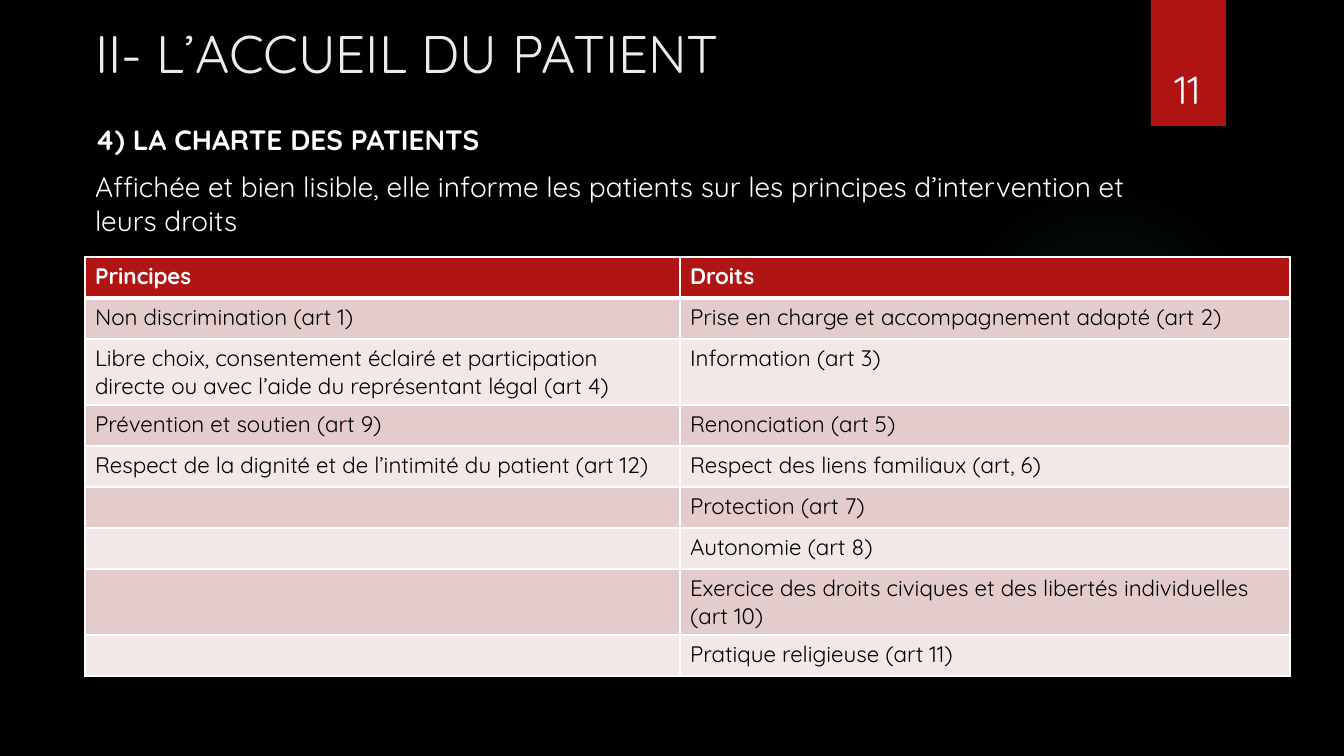
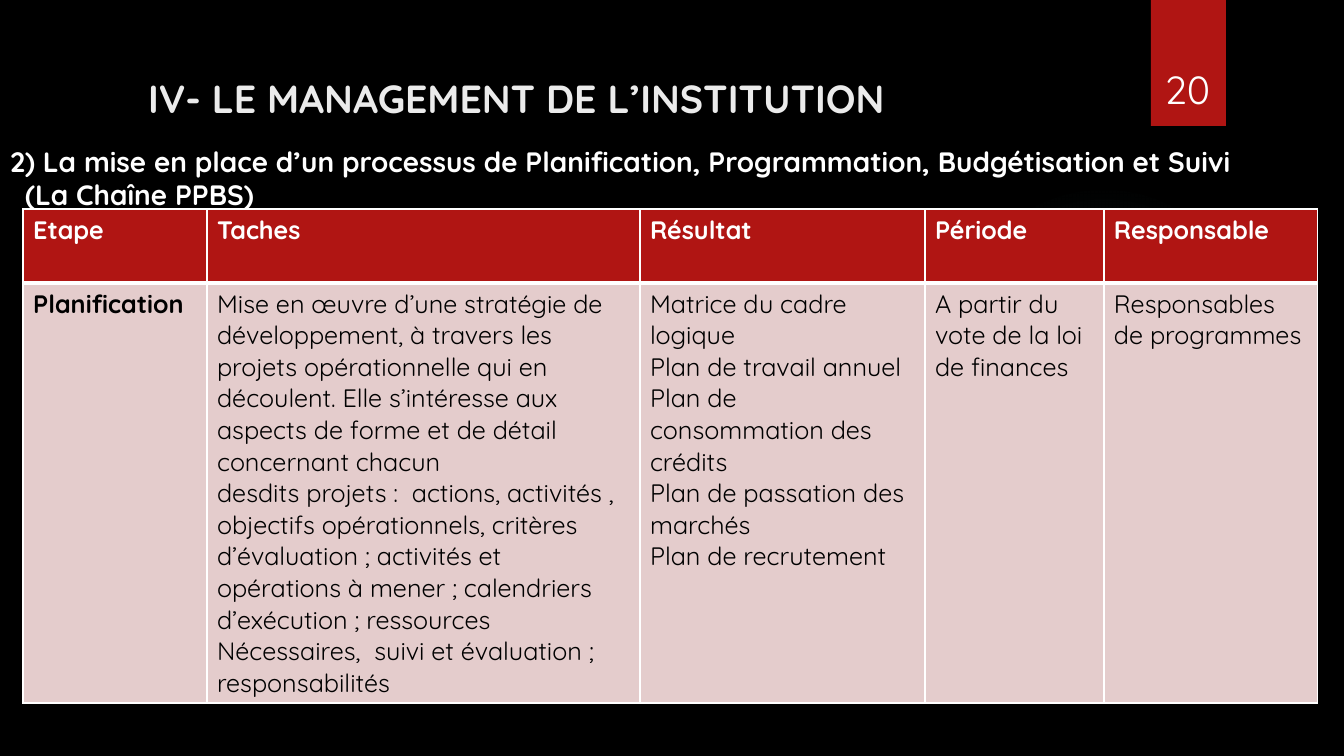
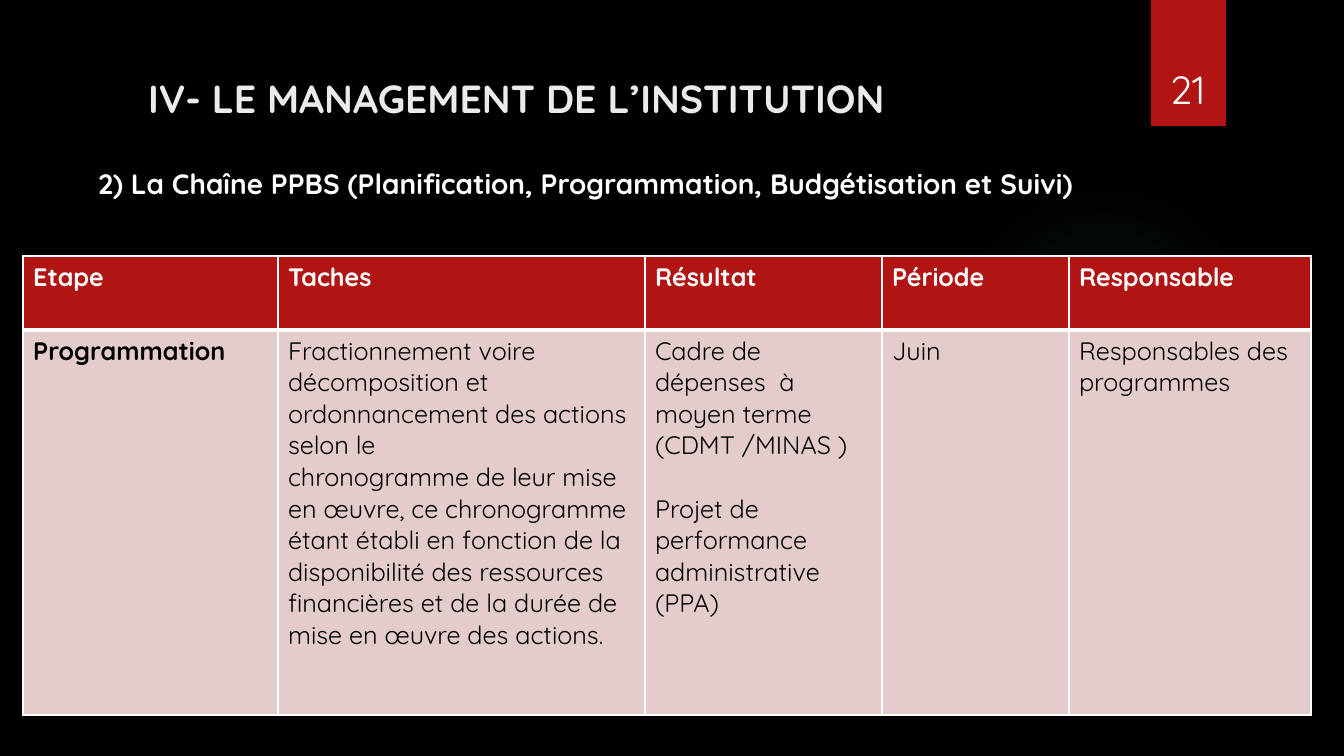
import lxml.etree
import pptx
import pptx.dml.color
import pptx.enum.shapes
import pptx.enum.text
import pptx.oxml
import pptx.oxml.ns
import pptx.util

# Shared look
RGBColor = pptx.dml.color.RGBColor
BLACK = RGBColor(0x00, 0x00, 0x00)
WHITE = RGBColor(0xFF, 0xFF, 0xFF)
TITLE_GREY = RGBColor(0xEB, 0xEB, 0xEB)
RED = RGBColor(0xB0, 0x15, 0x13)
BAND_DARK = RGBColor(0xE4, 0xCC, 0xCC)
BAND_LIGHT = RGBColor(0xF2, 0xE8, 0xE7)
GLOW = RGBColor(0x50, 0xB9, 0xC1)
FONT = "Quicksand"
EMU_PER_PX = 914400 / 100.8
SLIDE_SIZE = (1344, 756)
ANCHOR = pptx.enum.text.MSO_ANCHOR
ALIGN = pptx.enum.text.PP_ALIGN
SHAPE = pptx.enum.shapes.MSO_SHAPE

HEADINGS = ["Etape", "Taches", "Résultat", "Période", "Responsable"]
MANAGEMENT_TITLE = "IV- LE MANAGEMENT DE L’INSTITUTION"


def px(length):
    return pptx.util.Emu(round(length * EMU_PER_PX))


def place(shape, box):
    shape.left, shape.top, shape.width, shape.height = map(px, box)


def write_text(frame, text, size=20, color=WHITE, bold=False, align=ALIGN.LEFT,
               anchor=ANCHOR.TOP, hanging=0):
    """Write a string, or a list of paragraphs: text or (text, own format)."""
    frame.word_wrap = True
    frame.vertical_anchor = anchor
    for index, item in enumerate([text] if isinstance(text, str) else text):
        words, own = (item, {}) if isinstance(item, str) else item
        paragraph = frame.paragraphs[0] if index == 0 else frame.add_paragraph()
        properties = paragraph._p.get_or_add_pPr()
        properties.set("marL", str(px(hanging)))
        properties.set("indent", str(-px(hanging)))
        lxml.etree.SubElement(properties, pptx.oxml.ns.qn("a:buNone"))
        paragraph.alignment = align
        paragraph.space_before = pptx.util.Pt(own.get("gap", 0))
        run = paragraph.add_run()
        run.text = words
        run.font.name = FONT
        run.font.size = pptx.util.Pt(size)
        run.font.bold = own.get("bold", bold)
        run.font.color.rgb = color


# Master: background, glow and red tab
def add_master_shape(master, slide, kind, box, color):
    shape = slide.shapes.add_shape(kind, *map(px, box))
    shape.shadow.inherit = False
    shape.fill.solid()
    shape.fill.fore_color.rgb = color
    shape.line.fill.background()
    master.shapes._spTree.append(shape._element)
    return shape


def fade_out(shape, color):
    """Replace the solid fill by a radial one that fades to nothing."""
    stops = "".join(
        f'<a:gs pos="{position * 1000}"><a:srgbClr val="{color}">'
        f'<a:alpha val="{alpha * 1000}"/></a:srgbClr></a:gs>'
        for position, alpha in ((0, 7), (36, 6), (69, 0), (100, 0)))
    gradient = pptx.oxml.parse_xml(
        f'<a:gradFill {pptx.oxml.ns.nsdecls("a")}><a:gsLst>{stops}</a:gsLst>'
        '<a:path path="circle"><a:fillToRect l="50000" t="50000" r="50000" '
        'b="50000"/></a:path></a:gradFill>')
    properties = shape._element.spPr
    solid = properties.find(pptx.oxml.ns.qn("a:solidFill"))
    properties.replace(solid, gradient)


def dress_master(master, slide):
    master.background.fill.solid()
    master.background.fill.fore_color.rgb = BLACK
    glow = add_master_shape(master, slide, SHAPE.OVAL, (949, 184, 310, 310), GLOW)
    fade_out(glow, GLOW)
    add_master_shape(master, slide, SHAPE.RECTANGLE, (1151, 0, 75, 126), RED)


# Slide frame: title, body and page number
def fill_placeholder(shape, box, text, **text_format):
    place(shape, box)
    write_text(shape.text_frame, text, **text_format)
    shape.text_frame.auto_size = pptx.enum.text.MSO_AUTO_SIZE.NONE


def add_page_number(slide, number):
    box = slide.shapes.add_textbox(*map(px, (1141, 32, 93, 85)))
    write_text(box.text_frame, number, size=28, align=ALIGN.CENTER, anchor=ANCHOR.BOTTOM)


def fill_frame(slide, title, title_box, body, body_box, number,
               title_size=28, title_bold=True, hanging=0):
    fill_placeholder(slide.shapes.title, title_box, title, size=title_size,
                     bold=title_bold, color=TITLE_GREY)
    fill_placeholder(slide.placeholders[1], body_box, body, bold=True, hanging=hanging)
    add_page_number(slide, number)


# Tables
def set_borders(cell, top, bottom):
    properties = cell._tc.get_or_add_tcPr()
    for index, (side, points) in enumerate(
            (("L", 1), ("R", 1), ("T", top), ("B", bottom))):
        properties.insert(index, pptx.oxml.parse_xml(
            f'<a:ln{side} {pptx.oxml.ns.nsdecls("a")} w="{pptx.util.Pt(points)}">'
            f'<a:solidFill><a:srgbClr val="{WHITE}"/></a:solidFill></a:ln{side}>'))


def add_grid(slide, left, top, widths, heights, rows, size, bold_first=False):
    frame = slide.shapes.add_table(len(rows), len(widths), px(left), px(top),
                                   px(sum(widths)), px(sum(heights)))
    table = frame.table
    table.horz_banding = False
    for column, width in zip(table.columns, widths):
        column.width = px(width)
    for row, height in zip(table.rows, heights):
        row.height = px(height)
    for row_index, row in enumerate(rows):
        header = row_index == 0
        band = RED if header else BAND_DARK if row_index % 2 else BAND_LIGHT
        for column_index, text in enumerate(row):
            cell = table.cell(row_index, column_index)
            cell.fill.solid()
            cell.fill.fore_color.rgb = band
            set_borders(cell, top=3 if row_index == 1 else 1, bottom=3 if header else 1)
            if text:
                write_text(cell.text_frame, text, size=size,
                           color=WHITE if header else BLACK,
                           bold=header or (bold_first and column_index == 0))


# Slides
def build_charter(slide):
    fill_frame(
        slide, "II- L’ACCUEIL DU PATIENT", (85, 16, 1037, 68),
        ["4) LA CHARTE DES PATIENTS",
         ("Affichée et bien lisible, elle informe les patients sur les principes "
          "d’intervention et leurs droits", {"bold": False, "gap": 10})],
        (85, 117, 1092, 135), "11", title_size=37.8, title_bold=False)
    rows = [
        ("Principes", "Droits"),
        ("Non discrimination (art 1)",
         "Prise en charge et accompagnement adapté (art 2)"),
        ("Libre choix, consentement éclairé et participation directe ou avec "
         "l’aide du représentant légal (art 4)", "Information (art 3)"),
        ("Prévention et soutien (art 9)", "Renonciation (art 5)"),
        ("Respect de la dignité et de l’intimité du patient (art 12)",
         "Respect des liens familiaux (art, 6)"),
        ("", "Protection (art 7)"),
        ("", "Autonomie (art 8)"),
        ("", "Exercice des droits civiques et des libertés individuelles (art 10)"),
        ("", "Pratique religieuse (art 11)"),
    ]
    two_line_rows = (2, 7)
    heights = [66 if index in two_line_rows else 41 for index in range(len(rows))]
    add_grid(slide, 85, 257, (595, 610), heights, rows, size=16)


def build_step(slide, number, body, body_box, top, widths, heights, step, hanging=0):
    fill_frame(slide, MANAGEMENT_TITLE, (138, 69, 1144, 78), body, body_box, number,
               hanging=hanging)
    add_grid(slide, 23, top, widths, heights, [HEADINGS, step], size=18,
             bold_first=True)


def build_planning(slide):
    step = [
        "Planification",
        ["Mise en œuvre d’une stratégie de développement, à travers les projets "
         "opérationnelle qui en découlent. Elle s’intéresse aux aspects de forme "
         "et de détail concernant chacun",
         "desdits projets :  actions, activités , objectifs opérationnels, critères "
         "d’évaluation ; activités et opérations à mener ; calendriers "
         "d’exécution ; ressources",
         "Nécessaires,  suivi et évaluation ; responsabilités"],
        ["Matrice du cadre logique", "Plan de travail annuel",
         "Plan de consommation des crédits", "Plan de passation des marchés",
         "Plan de recrutement"],
        "A partir du vote de la loi de finances",
        "Responsables de programmes",
    ]
    build_step(
        slide, "20",
        "2) La mise en place d’un processus de Planification, Programmation, "
        "Budgétisation et Suivi (La Chaîne PPBS)",
        (0, 139, 1255, 70), 209, (184, 433, 285, 179, 214), (74, 420), step, hanging=15)


def build_programming(slide):
    step = [
        "Programmation",
        ["Fractionnement voire décomposition et ordonnancement des actions selon le",
         "chronogramme de leur mise en œuvre, ce chronogramme étant établi en "
         "fonction de la",
         "disponibilité des ressources financières et de la durée de mise en œuvre "
         "des actions."],
        ["Cadre de dépenses  à moyen terme (CDMT /MINAS )",
         ("Projet de performance administrative (PPA)", {"gap": 22.5})],
        "Juin",
        "Responsables des programmes",
    ]
    build_step(
        slide, "21",
        "2) La Chaîne PPBS (Planification, Programmation, Budgétisation et Suivi)",
        (88, 161, 1210, 70), 256, (255, 367, 237, 187, 242), (74, 385), step)


def main():
    presentation = pptx.Presentation()
    presentation.slide_width, presentation.slide_height = map(px, SLIDE_SIZE)
    layout = presentation.slide_layouts[1]
    for index, build in enumerate((build_charter, build_planning, build_programming)):
        slide = presentation.slides.add_slide(layout)
        if index == 0:
            dress_master(presentation.slide_master, slide)
        build(slide)
    presentation.save("out.pptx")


if __name__ == "__main__":
    main()
